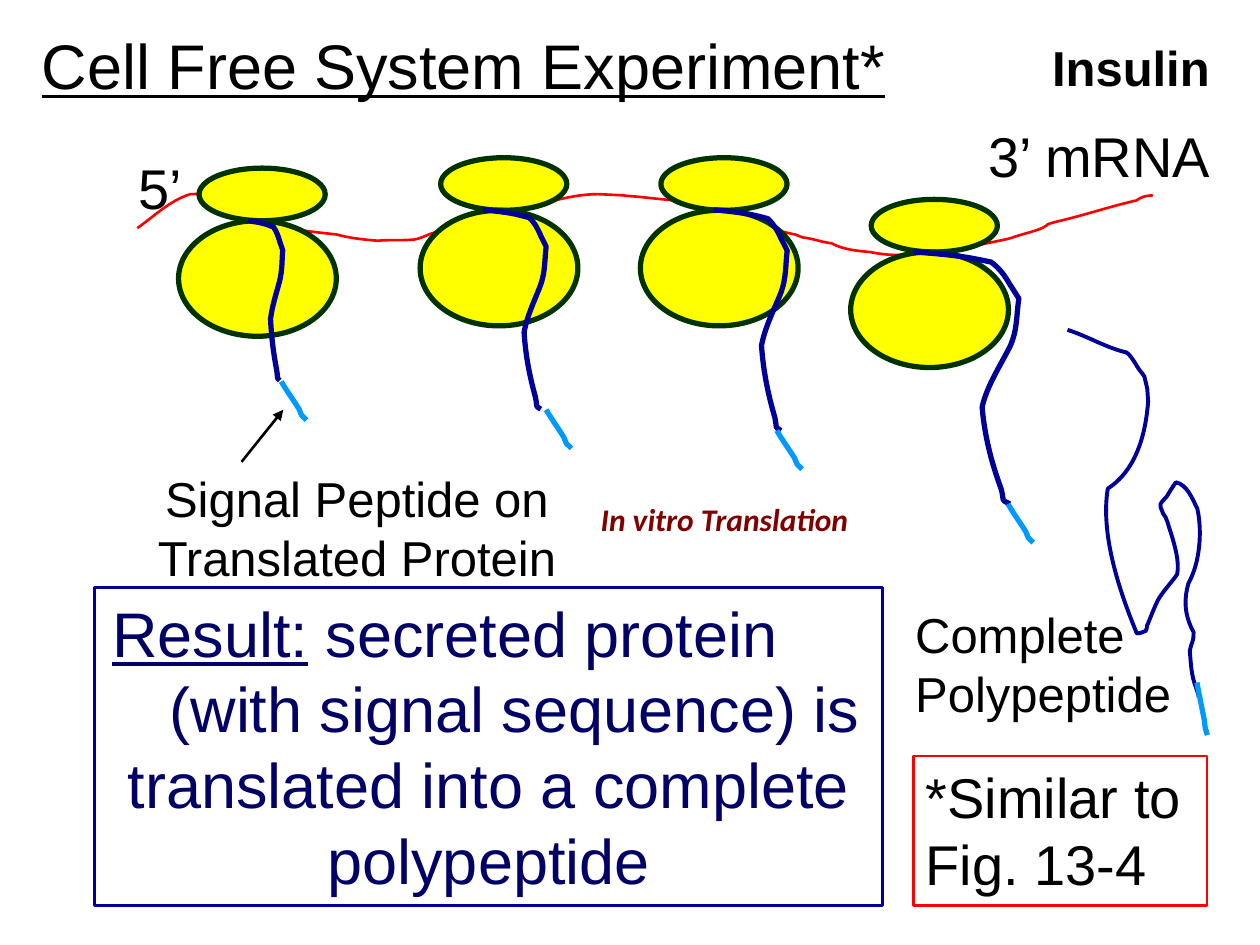
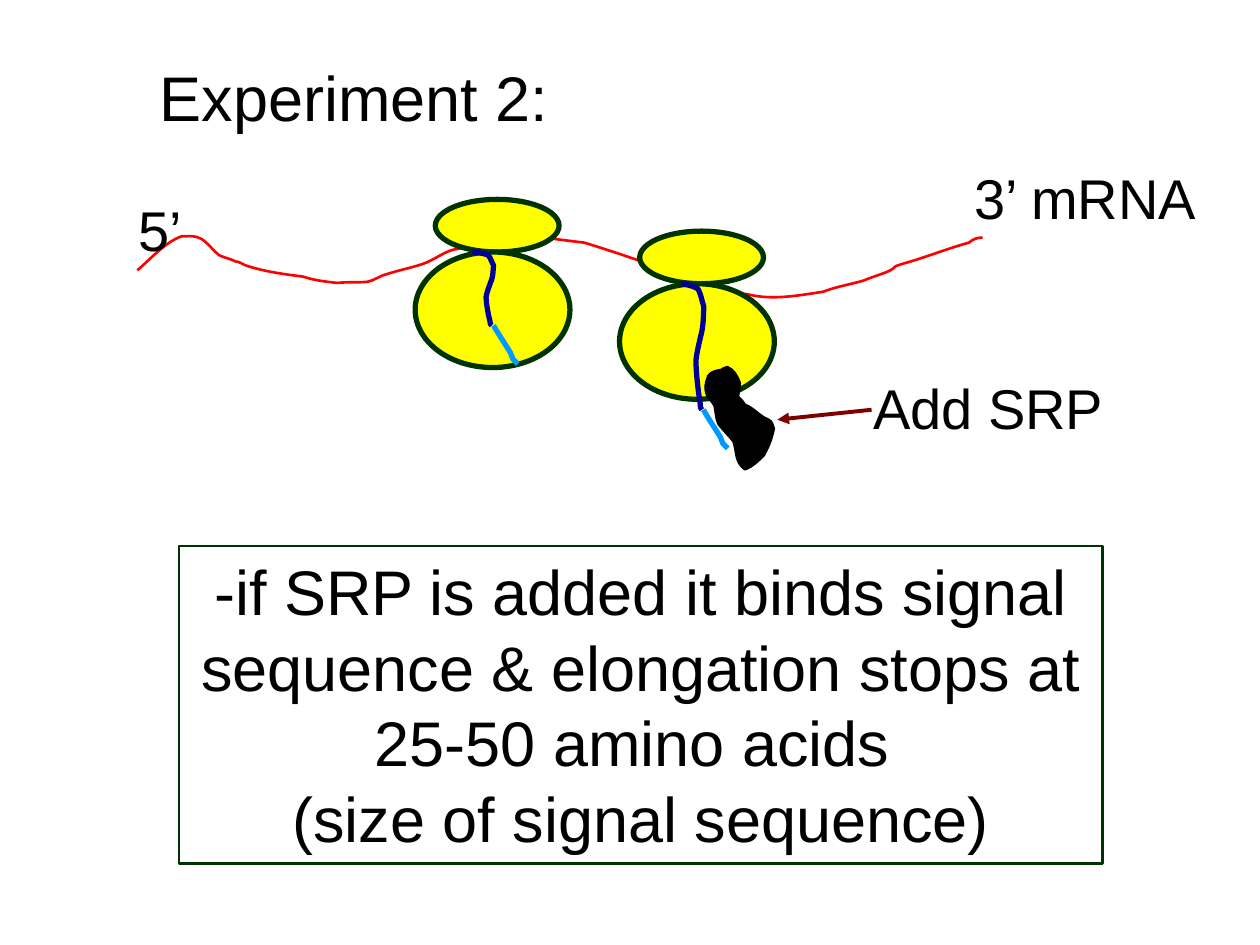
import pptx
import pptx.util
from lxml import etree
from pptx.dml.color import RGBColor
from pptx.enum.shapes import MSO_CONNECTOR, MSO_SHAPE
from pptx.enum.text import MSO_ANCHOR, MSO_AUTO_SIZE, PP_ALIGN
from pptx.oxml.ns import qn
from pptx.util import Cm

# Colours
BLACK = RGBColor(0x00, 0x00, 0x00)
WHITE = RGBColor(0xFF, 0xFF, 0xFF)
RED = RGBColor(0xFF, 0x00, 0x00)
MAROON = RGBColor(0x80, 0x00, 0x00)
YELLOW = RGBColor(0xFF, 0xFF, 0x00)
GREEN = RGBColor(0x00, 0x33, 0x00)
NAVY = RGBColor(0x00, 0x00, 0x66)
BLUE = RGBColor(0x00, 0x00, 0x99)
SKY = RGBColor(0x00, 0x99, 0xFF)

# Bezier outlines: grid size, then start point and three points per curve
MRNA = (806, 52), [
    (0, 28), (14, 18), (26, 6), (42, 1), (48, 1), (55, 0), (61, 3),
    (67, 6), (72, 12), (78, 16), (83, 18), (89, 19), (94, 21),
    (97, 21), (100, 23), (103, 24), (121, 29), (139, 31), (158, 33),
    (169, 36), (179, 37), (191, 38), (201, 37), (210, 38), (220, 37),
    (226, 36), (232, 32), (238, 31), (249, 28), (261, 26), (272, 23),
    (283, 20), (294, 12), (305, 11), (318, 9), (312, 10), (324, 8),
    (338, 4), (352, 1), (366, 1), (408, 3), (369, 1), (397, 3),
    (406, 4), (426, 6), (426, 6), (446, 11), (467, 17), (488, 23),
    (499, 26), (510, 31), (522, 33), (535, 38), (521, 33), (541, 38),
    (544, 39), (551, 40), (551, 40), (560, 45), (571, 46), (582, 47),
    (605, 52), (630, 48), (654, 45), (666, 41), (681, 39), (693, 36),
    (701, 33), (711, 31), (718, 28), (726, 24), (718, 26), (729, 23),
    (751, 18), (771, 11), (793, 6), (797, 3), (801, 2), (806, 2)]
CHAIN = (83, 200), [
    (0, 0), (13, 1), (26, 2), (40, 4), (47, 5), (61, 8), (61, 8),
    (68, 13), (72, 19), (76, 26), (78, 29), (83, 37), (83, 37),
    (81, 50), (82, 62), (76, 75), (68, 91), (58, 106), (54, 123),
    (56, 146), (61, 166), (69, 188), (72, 199), (68, 196), (76, 200)]
SIGNAL = (20, 31), [
    (0, 0), (4, 7), (9, 14), (14, 22), (15, 24), (15, 25), (16, 27),
    (17, 28), (20, 31), (20, 31)]
PROTEIN = (107, 293), [
    (0, 0), (16, 5), (30, 14), (47, 18), (52, 22), (54, 28), (58, 33),
    (59, 34), (61, 37), (61, 37), (64, 50), (63, 43), (64, 57),
    (62, 82), (55, 111), (32, 126), (26, 162), (41, 207), (55, 241),
    (57, 241), (60, 240), (62, 239), (63, 238), (63, 236), (63, 235),
    (65, 231), (71, 214), (74, 211), (78, 205), (83, 200), (87, 194),
    (89, 184), (85, 171), (82, 161), (80, 156), (79, 149), (76, 146),
    (72, 137), (73, 139), (79, 132), (81, 128), (86, 121), (86, 121),
    (95, 123), (99, 134), (103, 142), (107, 160), (105, 185), (96, 201),
    (92, 215), (93, 227), (100, 240), (100, 243), (100, 245), (99, 248),
    (98, 250), (97, 255), (97, 255), (98, 265), (98, 274), (102, 284),
    (104, 291), (104, 288), (104, 292)]
SRP = (56, 81), [
    (16, 2), (11, 3), (7, 3), (4, 7), (2, 13), (0, 17), (4, 24),
    (5, 26), (8, 28), (9, 31), (10, 35), (10, 41), (12, 45),
    (15, 49), (20, 54), (24, 59), (27, 68), (25, 75), (33, 81),
    (39, 79), (44, 74), (48, 70), (53, 61), (54, 57), (56, 49),
    (54, 42), (54, 43), (48, 40), (43, 37), (39, 32), (33, 30),
    (26, 19), (27, 30), (29, 13), (27, 7), (24, 2), (19, 0),
    (14, 2), (14, 2), (16, 2)]


def paint(shape, line, width, fill=None):
    shape.shadow.inherit = False
    if fill is None:
        shape.fill.background()
    else:
        shape.fill.solid()
        shape.fill.fore_color.rgb = fill
    shape.line.color.rgb = line
    shape.line.width = pptx.util.Pt(width)


def bend(shape):
    """Turn each three line segments into one Bezier curve."""
    parts = list(shape._element.iter(qn("a:lnTo")))
    for i in range(0, len(parts), 3):
        cubic = etree.Element(qn("a:cubicBezTo"))
        parts[i].addprevious(cubic)
        for part in parts[i:i + 3]:
            cubic.append(part[0])
            part.getparent().remove(part)


def curve(slide, outline, box, line, width, fill=None):
    (cols, rows), points = outline
    x, y, w, h = box
    spots = [(Cm(x + w * px / cols), Cm(y + h * py / rows))
             for px, py in points]
    pen = slide.shapes.build_freeform(*spots[0])
    pen.add_line_segments(spots[1:], close=fill is not None)
    shape = pen.convert_to_shape()
    bend(shape)
    paint(shape, line, width, fill)


def write(shape, lines, size, color=BLACK, align=PP_ALIGN.LEFT, wrap=True,
          name="Arial", bold=False, italic=False):
    """Put each line in its own paragraph."""
    frame = shape.text_frame
    frame.auto_size = MSO_AUTO_SIZE.NONE
    frame.word_wrap = wrap
    frame.vertical_anchor = MSO_ANCHOR.TOP
    frame.margin_left = frame.margin_right = Cm(0.25)
    frame.margin_top = frame.margin_bottom = Cm(0.13)
    frame.text = "\n".join(lines)
    for para in frame.paragraphs:
        para.alignment = align
        font = para.font
        font.name, font.size = name, pptx.util.Pt(size)
        font.bold, font.italic = bold, italic
        font.color.rgb = color
    return frame


def title(slide, text, box):
    shape = slide.shapes.title
    shape.left, shape.top, shape.width, shape.height = map(Cm, box)
    return write(shape, [text], 36)


def label(slide, text, box, size, **style):
    write(slide.shapes.add_textbox(*map(Cm, box)), [text], size, **style)


def panel(slide, lines, box, size, line, fill=None, **style):
    shape = slide.shapes.add_shape(MSO_SHAPE.RECTANGLE, *map(Cm, box))
    paint(shape, line, 1.5, fill)
    return write(shape, lines, size, **style)


def arrow(slide, start, end, color, width):
    link = slide.shapes.add_connector(
        MSO_CONNECTOR.STRAIGHT, *map(Cm, start + end))
    link.line.color.rgb = color
    link.line.width = pptx.util.Pt(width)
    etree.SubElement(link.line._get_or_add_ln(), qn("a:tailEnd"),
                     type="triangle")
    etree.SubElement(link._element.spPr, qn("a:effectLst"))


def ribosome(slide, x, y, w):
    """Small subunit on top of the large one."""
    group = slide.shapes.add_group_shape()
    top, base = 1.06, 2.33
    for box in ((x + w * 0.13, y, w * 0.8, top), (x, y + top, w, base)):
        part = group.shapes.add_shape(MSO_SHAPE.OVAL, *map(Cm, box))
        paint(part, GREEN, 3, YELLOW)


def strand(slide, box, five, three):
    """The mRNA with the labels of its two ends."""
    curve(slide, MRNA, box, RED, 1.5)
    label(slide, "5’", five + (1.4, 1.6), 32, wrap=False)
    label(slide, "3’ mRNA", three + (5.03, 1.6), 32, wrap=False)


def peptides(slide, chains, tips, width):
    for box in chains:
        curve(slide, CHAIN, box, BLUE, 3)
    for tip in tips:
        curve(slide, SIGNAL, tip + (width, 0.78), SKY, 3)


def system(slide):
    """Translation without cells."""
    head = title(slide, "Cell Free System Experiment*", (0.59, 0.41, 17.58, 1.78))
    head.paragraphs[0].font.underline = True

    # mRNA, ribosomes and growing chains
    strand(slide, (2.77, 3.89, 20.47, 1.32), (2.54, 2.96), (19.67, 2.32))
    for x, y in ((3.6, 3.39), (17.15, 4.02), (12.91, 3.18), (8.47, 3.18)):
        ribosome(slide, x, y, 3.18)
    peptides(slide,
             ((5.0, 4.45, 0.7, 3.22), (18.42, 5.08, 2.12, 5.08),
              (14.39, 4.23, 1.48, 4.45), (9.74, 4.23, 1.27, 4.02)),
             ((5.67, 7.69), (20.32, 10.16), (15.66, 8.68), (11.01, 8.26)), 0.51)

    # Finished protein
    curve(slide, PROTEIN, (21.52, 6.65, 2.72, 7.44), BLUE, 2.25)
    curve(slide, SIGNAL, (24.13, 13.76, 0.21, 1.06), SKY, 3)

    # Labels
    label(slide, "Signal Peptide on Translated Protein",
          (2.33, 9.31, 9.73, 2.62), 28, align=PP_ALIGN.CENTER)
    label(slide, "Complete Polypeptide", (18.2, 12.06, 6.15, 2.62), 28)
    label(slide, "Insulin", (20.96, 0.63, 3.68, 1.45), 28, bold=True, wrap=False)
    label(slide, "In vitro Translation", (11.86, 9.95, 8.13, 1.27), 18,
          color=MAROON, name="Calibri", bold=True, italic=True)
    arrow(slide, (4.87, 9.31), (5.71, 8.26), BLACK, 1.5)

    # Result and note
    frame = panel(slide, ["", "(with signal sequence) is",
                          "translated into a complete polypeptide"],
                  (1.91, 11.85, 15.88, 6.4), 36, BLUE, WHITE,
                  color=NAVY, align=PP_ALIGN.CENTER)
    first, second = frame.paragraphs[:2]
    for text, under in (("Result:", True), (" secreted protein", False)):
        run = first.add_run()
        run.text = text
        run.font.underline = under
    for para, indent in ((first, 0.1), (second, 1.26)):
        para.alignment = PP_ALIGN.LEFT
        para._p.get_or_add_pPr().set("marL", str(Cm(indent)))
    panel(slide, ["*Similar to Fig. 13-4"], (18.41, 15.24, 5.92, 3.02), 32, RED)


def stop(slide):
    """SRP halts elongation."""
    title(slide, "Experiment 2:", (2.97, 1.05, 9.73, 1.78))

    # mRNA, ribosomes and chains
    strand(slide, (2.77, 4.74, 17.04, 1.32), (2.54, 3.81), (19.39, 3.17))
    for x, y in ((8.37, 4.02), (12.49, 4.66)):
        ribosome(slide, x, y, 3.12)
    peptides(slide, ((9.52, 5.08, 0.43, 1.48), (13.73, 5.72, 0.46, 2.54)),
             ((9.95, 6.56), (14.18, 8.26)), 0.49)

    # SRP
    curve(slide, SRP, (14.18, 7.4, 1.42, 2.06), BLACK, 1.5, BLACK)
    label(slide, "Add SRP", (17.35, 7.41, 5.92, 1.6), 32)
    arrow(slide, (17.57, 8.26), (15.67, 8.46), MAROON, 2.25)

    panel(slide, ["-if SRP is added it binds signal sequence & elongation "
                  "stops at 25-50 amino acids ", "(size of signal sequence)"],
          (3.61, 11.01, 18.62, 6.4), 36, GREEN, align=PP_ALIGN.CENTER)


def main():
    deck = pptx.Presentation()
    deck.slide_width, deck.slide_height = Cm(25.4), Cm(19.05)
    for build in (system, stop):
        build(deck.slides.add_slide(deck.slide_layouts[5]))
    deck.save("out.pptx")


if __name__ == "__main__":
    main()
